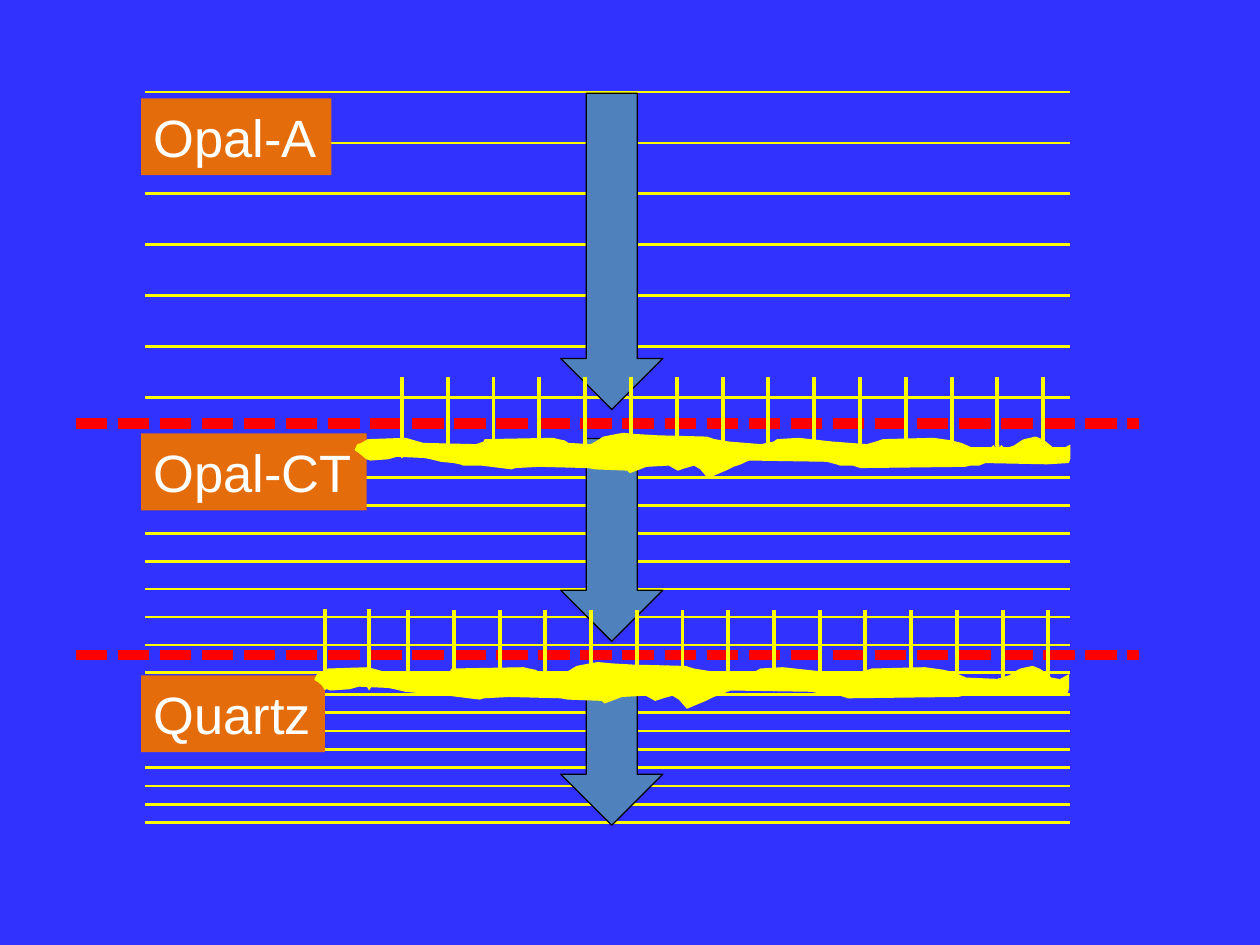
from pptx import Presentation
from pptx.dml.color import RGBColor
from pptx.enum.dml import MSO_LINE
from pptx.enum.shapes import MSO_CONNECTOR, MSO_SHAPE
from pptx.enum.text import MSO_ANCHOR, MSO_AUTO_SIZE, PP_ALIGN
from pptx.oxml.ns import qn
from pptx.util import Inches, Pt
from lxml.etree import SubElement

COLORS = {"ground": "3232FE", "bed": "FFFF00", "front": "FF0000", "arrow": "4F81BD",
          "outline": "000000", "label": "E46C0A", "text": "FFFFFF"}
BED_BANDS = [(7.3, 35.6), (37.9, 53.4), (55.1, 65.3)]
BEDS_PER_BAND = 8
FRONTS = [33.6, 52]
ARROWS = [(7.4, 25.1), (34.8, 16.1), (53.1, 12.4)]
LABELS = [("Opal-A", 7.8, 15.1), ("Opal-CT", 34.4, 17.9), ("Quartz", 53.6, 14.6)]
FLOWS = [(31.9, 82.8, 15, 29.9), (32.4, 83.2, 15, 48.4), (25.8, 29.3, 2, 48.3)]
LAYERS = [(28.2, 34.4, 56.7, 3.5), (25, 52.6, 59.8, 3.6)]
LAYER_OUTLINE = [
    (560, 13), (554, 12), (548, 7), (545, 5), (540, 3), (531, 5), (529, 6), (523, 10),
    (514, 13), (490, 12), (481, 8), (473, 6), (459, 4), (419, 5), (413, 7), (406, 9),
    (379, 7), (352, 4), (335, 5), (332, 7), (322, 9), (297, 7), (291, 6), (285, 5),
    (279, 3), (240, 2), (223, 1), (213, 0), (207, 1), (197, 3), (189, 8), (187, 9),
    (169, 8), (166, 6), (161, 5), (157, 4), (103, 5), (102, 7), (96, 9), (54, 8),
    (47, 6), (40, 4), (10, 5), (5, 8), (2, 9), (0, 13), (3, 15), (9, 20), (12, 21),
    (26, 20), (33, 18), (55, 19), (60, 20), (68, 22), (78, 23), (83, 24), (86, 25),
    (100, 25), (116, 27), (124, 28), (127, 27), (146, 26), (185, 27), (190, 28),
    (216, 29), (218, 31), (231, 26), (249, 25), (256, 29), (262, 27), (269, 25),
    (274, 28), (280, 35), (287, 32), (294, 29), (300, 26), (306, 24), (310, 22),
    (313, 21), (374, 22), (382, 24), (385, 25), (395, 25), (398, 26), (401, 27),
    (484, 26), (488, 25), (495, 25), (500, 23), (549, 24), (566, 23), (567, 20), (567, 9)]


def spread(first, last, count):
    return [first + (last - first) * i / (count - 1) for i in range(count)]


class Diagram:
    """Draws styled elements on one slide, on a grid of 100 columns by 75 rows."""

    def __init__(self, prs):
        self.cell = prs.slide_width / 100
        self.s = prs.slides.add_slide(prs.slide_layouts[6])
        self.paint(self.s.background.fill, "ground")

    def grid(self, *cells):
        return [round(c * self.cell) for c in cells]

    def paint(self, fill, color):
        fill.solid()
        fill.fore_color.rgb = RGBColor.from_string(COLORS[color])

    def style(self, sp, fill, line, width=0.75):
        sp.shadow.inherit = False
        self.paint(sp.fill, fill)
        self.paint(sp.line.fill, line)
        sp.line.width = Pt(width)

    def line(self, x1, y1, x2, y2, color, width, dash=None, head=False):
        c = self.s.shapes.add_connector(MSO_CONNECTOR.STRAIGHT, *self.grid(x1, y1, x2, y2))
        self.paint(c.line.fill, color)
        c.line.width = Pt(width)
        if dash:
            c.line.dash_style = dash
        if head:
            SubElement(c.line._get_or_add_ln(), qn("a:tailEnd"), type="arrow")
        SubElement(c._element.spPr, qn("a:effectLst"))

    def down_arrow(self, x, y, w, h):
        sp = self.s.shapes.add_shape(MSO_SHAPE.DOWN_ARROW, *self.grid(x, y, w, h))
        self.style(sp, "arrow", "outline")

    def label(self, text, x, y, w, h):
        sp = self.s.shapes.add_textbox(*self.grid(x, y, w, h))
        self.paint(sp.fill, "label")
        tf = sp.text_frame
        tf.text = text
        tf.word_wrap = False
        tf.auto_size = MSO_AUTO_SIZE.NONE
        tf.vertical_anchor = MSO_ANCHOR.MIDDLE
        p = tf.paragraphs[0]
        p.alignment = PP_ALIGN.LEFT
        font = p.runs[0].font
        font.name, font.size = "Arial", Pt(30)
        font.color.rgb = RGBColor.from_string(COLORS["text"])

    def layer(self, x, y, w, h):
        builder = self.s.shapes.build_freeform(*LAYER_OUTLINE[0], scale=self.cell / 10)
        builder.add_line_segments(LAYER_OUTLINE[1:], close=False)
        sp = builder.convert_to_shape()
        sp.left, sp.top, sp.width, sp.height = self.grid(x, y, w, h)
        self.style(sp, "bed", "bed")


def main():
    prs = Presentation()
    prs.slide_width, prs.slide_height = Inches(10), Inches(7.5)
    d = Diagram(prs)
    for first, last in BED_BANDS:
        for y in spread(first, last, BEDS_PER_BAND):
            d.line(11.5, y, 84.9, y, "bed", 1.5)
    for y in FRONTS:
        d.line(6, y, 90.4, y, "front", 6, dash=MSO_LINE.SQUARE_DOT)
    for y, h in ARROWS:
        d.down_arrow(44.5, y, 8.1, h)
    for text, y, w in LABELS:
        d.label(text, 11.2, y, w, 6.1)
    for first, last, count, y in FLOWS:
        for x in spread(first, last, count):
            d.line(x, y, x, y + 6.5, "bed", 2.25, head=True)
    for box in LAYERS:
        d.layer(*box)
    prs.save("out.pptx")


if __name__ == "__main__":
    main()
